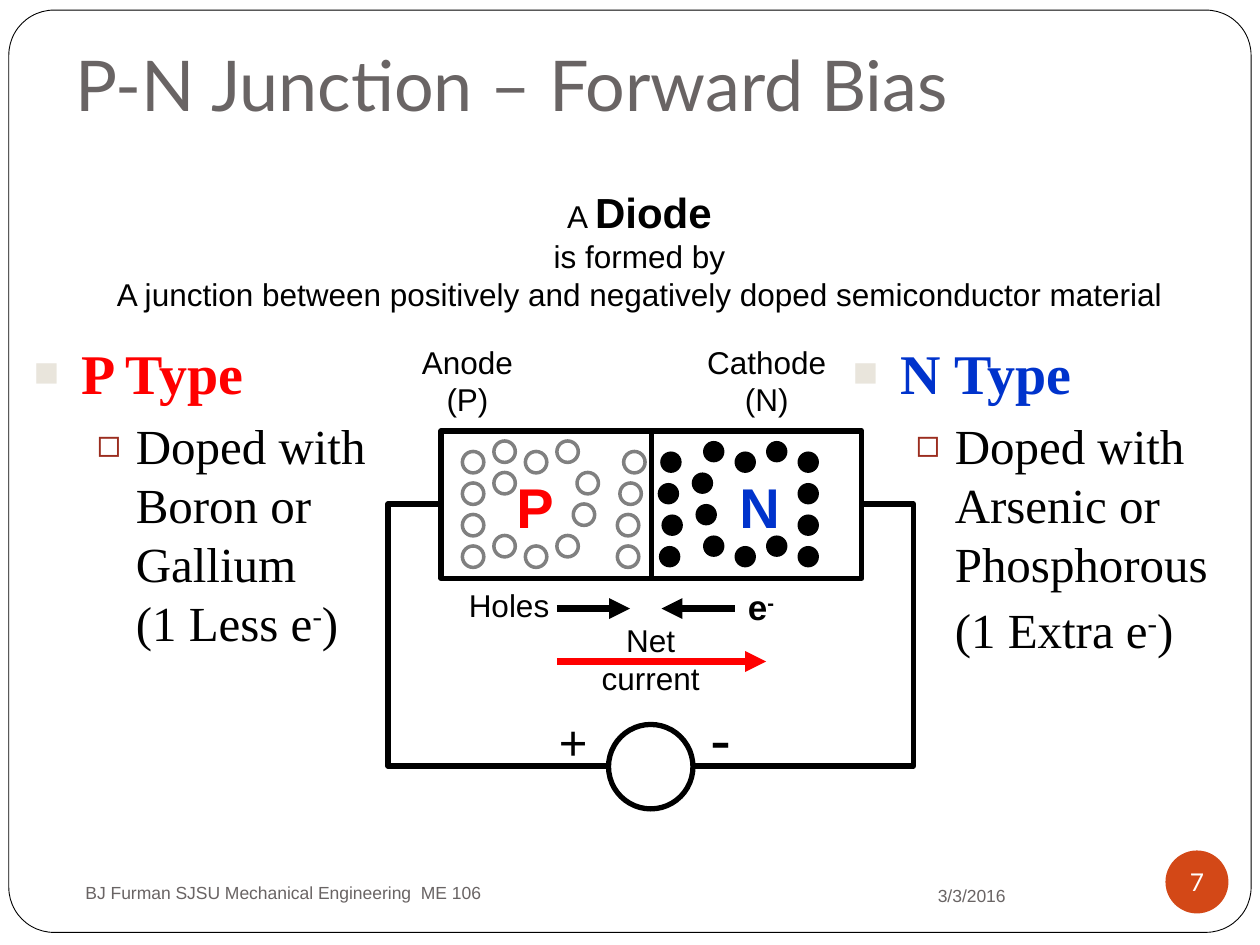
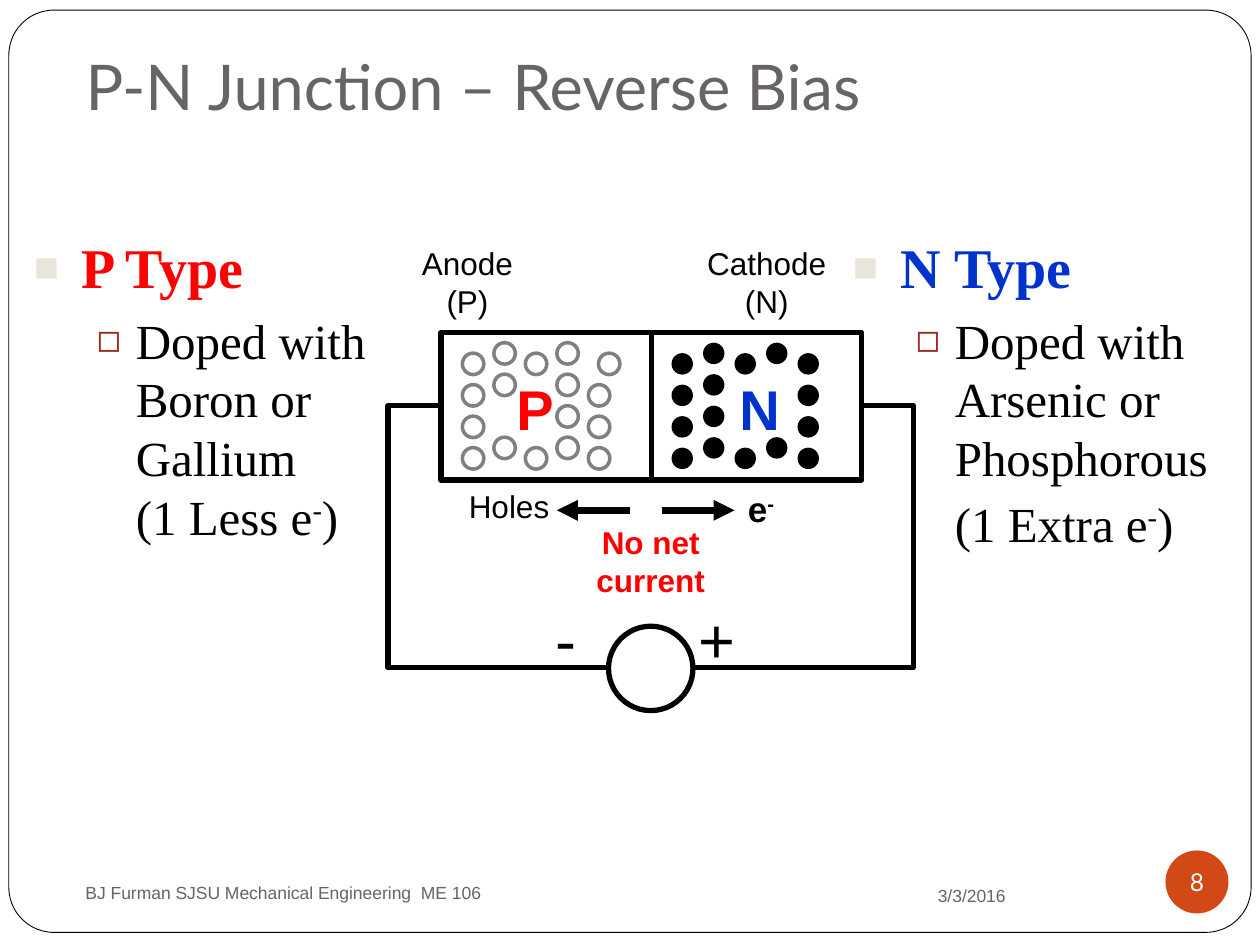
from pptx import Presentation
from pptx.dml.color import RGBColor
from pptx.enum.shapes import MSO_CONNECTOR as Link, MSO_SHAPE as Kind
from pptx.enum.text import MSO_ANCHOR as Anchor, MSO_AUTO_SIZE as Fit, PP_ALIGN as Align
from pptx.oxml.ns import qn
from pptx.util import Inches, Pt
from lxml.etree import SubElement

# Shared look
BLACK, WHITE, GRAY = "000000", "FFFFFF", "808080"
RED, BLUE, SLATE = "FF0000", "0033CC", "696464"
CREAM, RUST, ORANGE = "E9E5DC", "9B2D1F", "D34817"
SANS, SERIF, HEAD = "Arial", "Times New Roman", "Lato"
FOOTER = "BJ Furman SJSU Mechanical Engineering  ME 106"
DATE = "3/3/2016"

# Carriers: (x, rows), a row being a twelfth of an inch
DOT = 0.17
HIGH, LOW = (0, 3, 6, 9), (1, 4, 7, 10)
HOLES = [(3.67, LOW), (3.92, (0, 3, 9)), (4.17, (1, 10)), (4.42, (0, 9))]
ELECTRONS = [(5.83, (1, 10)), (6.08, (0, 9)), (6.33, LOW)]


def rgb(color):
    return RGBColor.from_string(color)


def style(run, size, color=BLACK, face=SANS, bold=False, sup=False):
    font = run.font
    font.size, font.name, font.bold = Pt(size), face, bold
    font.color.rgb = rgb(color)
    if sup:
        run._r.get_or_add_rPr().set("baseline", "30000")


def write(para, *parts):
    """Fill a paragraph with parts, each a text and its style options."""
    for text, look in parts:
        if para.runs:
            para.add_run().text = text
            fresh = para.runs[-1:]
        else:
            para.text = text
            fresh = para.runs
        for run in fresh:
            style(run, **look)


def add_box(slide, left, top, width, height, anchor=Anchor.TOP):
    box = slide.shapes.add_textbox(Inches(left), Inches(top), Inches(width), Inches(height))
    frame = box.text_frame
    frame.word_wrap = True
    frame.vertical_anchor = anchor
    return frame


def add_label(slide, text, left, top, width, height, size=18,
              align=Align.CENTER, anchor=Anchor.TOP, **look):
    para = add_box(slide, left, top, width, height, anchor).paragraphs[0]
    para.alignment = align
    write(para, (text, dict(size=size, **look)))
    return para


def add_form(slide, kind, left, top, width, height, fill=None, line=None, weight=3):
    form = slide.shapes.add_shape(kind, Inches(left), Inches(top), Inches(width), Inches(height))
    form.shadow.inherit = False
    if fill:
        form.fill.solid()
        form.fill.fore_color.rgb = rgb(fill)
    else:
        form.fill.background()
    if line:
        form.line.color.rgb = rgb(line)
        form.line.width = Pt(weight)
    else:
        form.line.fill.background()
    return form


def add_arrow(slide, start, end, y, color=BLACK):
    arrow = slide.shapes.add_connector(Link.STRAIGHT, Inches(start), Inches(y), Inches(end), Inches(y))
    arrow.line.color.rgb = rgb(color)
    arrow.line.width = Pt(4)
    SubElement(arrow.line._get_or_add_ln(), qn("a:tailEnd"), type="triangle")
    SubElement(arrow._element.spPr, qn("a:effectLst"))


def add_dots(slide, columns, top, **look):
    for x, rows in columns:
        for row in rows:
            add_form(slide, Kind.OVAL, x, top + 0.08 + row / 12, DOT, DOT, **look)


def set_bullet(para, mark, color, scale, margin, hang):
    props = para._p.get_or_add_pPr()
    props.set("marL", str(Inches(margin)))
    props.set("indent", str(-Inches(hang)))
    tint = SubElement(props, qn("a:buClr"))
    SubElement(tint, qn("a:srgbClr"), val=color)
    SubElement(props, qn("a:buSzPct"), val=str(scale * 1000))
    SubElement(props, qn("a:buFont"), typeface=SANS)
    SubElement(props, qn("a:buChar"), char=mark)


def add_type(slide, left, top, width, name, color, detail, tail=()):
    """Bulleted description of one doped material."""
    frame = add_box(slide, left, top, width, 3)
    first, second = frame.paragraphs[0], frame.add_paragraph()
    first.space_before, second.space_before = Pt(6.4), Pt(5.6)
    set_bullet(first, "■", CREAM, 75, 0.38, 0.38)
    set_bullet(second, "◻", RUST, 80, 0.81, 0.31)
    second.level = 1
    write(first, (name, dict(size=32, color=color, face=SERIF, bold=True)))
    look = dict(size=28, face=SERIF)
    write(second, (detail, look), ("-", dict(look, sup=True)), (")", look), *tail)


def add_types(slide, top):
    add_type(slide, 0.17, top, 2.92, "P Type", RED, "Doped with Boron or Gallium\v(1 Less e")
    add_type(slide, 6.67, top, 3.33, "N Type", BLUE, "Doped with Arsenic or Phosphorous\v(1 Extra e",
             tail=[(" ", dict(size=32, face=SERIF))])


def add_sign(slide, text, center, top, size):
    drop = (36 - size) / 80  # keeps both signs on one baseline
    add_label(slide, text, center - 0.3, top + 2.08 + drop, 0.6, 0.7, size)


def add_diode(slide, top, holes, electrons, signs):
    """Circuit with its source, the two halves and their carriers."""
    add_form(slide, Kind.RECTANGLE, 3.08, top + 0.58, 4.17, 2.08, line=BLACK)
    add_form(slide, Kind.OVAL, 4.83, top + 2.33, 0.67, 0.67, WHITE, BLACK)
    for sign in signs:
        add_sign(slide, sign[0], sign[1], top, sign[2])
    halves = [("Anode\v(P)", 3, 1.42, 3.5, "P", 4, RED),
              ("Cathode\v(N)", 5.25, 1.67, 5.17, "N", 5.77, BLUE)]
    for pole, left, width, side, *_ in halves:
        add_label(slide, pole, left, top - 0.75, width, 0.71)
        add_form(slide, Kind.RECTANGLE, side, top, 1.67, 1.17, WHITE, BLACK)
    add_dots(slide, HOLES + holes, top, fill=WHITE, line=GRAY, weight=2)
    add_dots(slide, ELECTRONS + electrons, top, fill=BLACK)
    for *_, letter, left, color in halves:
        add_label(slide, letter, left, top + 0.28, 0.6, 0.63, 32, Align.LEFT, color=color, bold=True)


def add_flow(slide, top, hole, electron):
    """Arrows for the drift of the carriers."""
    add_arrow(slide, *hole, top + 1.41)
    add_arrow(slide, *electron, top + 1.41)
    add_label(slide, "Holes", 3.58, top + 1.18, 0.92, 0.4)
    para = add_label(slide, "e", 5.58, top + 1.18, 0.92, 0.44, 20, bold=True)
    write(para, ("-", dict(size=20, bold=True, sup=True)))


def add_net(slide, text, top, **look):
    add_label(slide, text, 4.58, top + 1.46, 1.17, 0.71, **look)


def add_page(deck, title, number, left, top, width, height, size):
    """Slide with frame, title, footer and page number."""
    slide = deck.slides.add_slide(deck.slide_layouts[5])
    border = add_form(slide, Kind.ROUNDED_RECTANGLE, 0.07, 0.08, 9.86, 7.32, line=BLACK, weight=0.5)
    border.adjustments[0] = 0.049
    head = slide.shapes.title
    head.left, head.top = Inches(left), Inches(top)
    head.width, head.height = Inches(width), Inches(height)
    frame = head.text_frame
    frame.text = title
    frame.auto_size = Fit.NONE
    frame.vertical_anchor = Anchor.BOTTOM
    frame.margin_bottom = Inches(0.1)
    frame.paragraphs[0].alignment = Align.LEFT
    style(frame.paragraphs[0].runs[0], size, SLATE, HEAD)

    add_label(slide, DATE, 6.75, 6.96, 1.33, 0.29, 10, Align.RIGHT, Anchor.MIDDLE, color=SLATE)
    add_label(slide, FOOTER, 0.58, 6.92, 4.92, 0.33, 10, Align.LEFT, Anchor.MIDDLE, color=SLATE)
    badge = add_form(slide, Kind.OVAL, 9.25, 6.75, 0.5, 0.5, ORANGE).text_frame
    badge.margin_left = badge.margin_right = badge.margin_top = badge.margin_bottom = 0
    badge.word_wrap = False
    badge.vertical_anchor = Anchor.MIDDLE
    badge.paragraphs[0].alignment = Align.CENTER
    write(badge.paragraphs[0], (str(number), dict(size=14, color=WHITE, face=HEAD)))
    return slide


def add_intro(slide):
    frame = add_box(slide, 0.79, 1.43, 8.57, 1.11)
    plain = dict(size=18)
    lines = [[("A ", plain), ("Diode", dict(size=24, bold=True))],
             [("is formed by", plain)],
             [("A junction between positively and negatively doped semiconductor material", plain)]]
    for i, parts in enumerate(lines):
        para = frame.add_paragraph() if i else frame.paragraphs[0]
        para.alignment = Align.CENTER
        write(para, *parts)


def add_forward(deck):
    top = 3.42
    slide = add_page(deck, "P-N Junction – Forward Bias", 7, 0.5, 0.21, 9, 0.89, 40)
    add_intro(slide)
    add_types(slide, 2.64)
    holes = [(4.58, (3,)), (4.55, (6,)), (4.92, (4,)), (4.9, (7, 10)), (4.95, (1,))]
    electrons = [(5.24, (1,)), (5.22, (4,)), (5.25, (7,)), (5.23, (10,)),
                 (5.58, (0, 9)), (5.49, (3,)), (5.52, (6,))]
    add_diode(slide, top, holes, electrons, [("+", 4.55, 28), ("-", 5.72, 36)])
    add_flow(slide, top, (4.42, 5), (5.83, 5.25))
    add_arrow(slide, 4.42, 6.08, top + 1.83, RED)
    add_net(slide, "Net current", top)


def add_reverse(deck):
    top = 2.64
    slide = add_page(deck, "P-N Junction – Reverse Bias", 8, 0.58, 0.3, 8.92, 0.78, 36)
    add_types(slide, 1.8)
    holes = [(4.42, (3, 6)), (4.67, (4, 7, 10)), (4.75, (1,))]
    electrons = [(5.33, LOW), (5.58, HIGH)]
    add_diode(slide, top, holes, electrons, [("-", 4.49, 36), ("+", 5.69, 36)])
    add_flow(slide, top, (5, 4.42), (5.25, 5.83))
    add_net(slide, "No net current", top, color=RED, bold=True)


def main():
    deck = Presentation()
    deck.slide_width, deck.slide_height = Inches(10), Inches(7.5)
    add_forward(deck)
    add_reverse(deck)
    deck.save("out.pptx")


if __name__ == "__main__":
    main()
